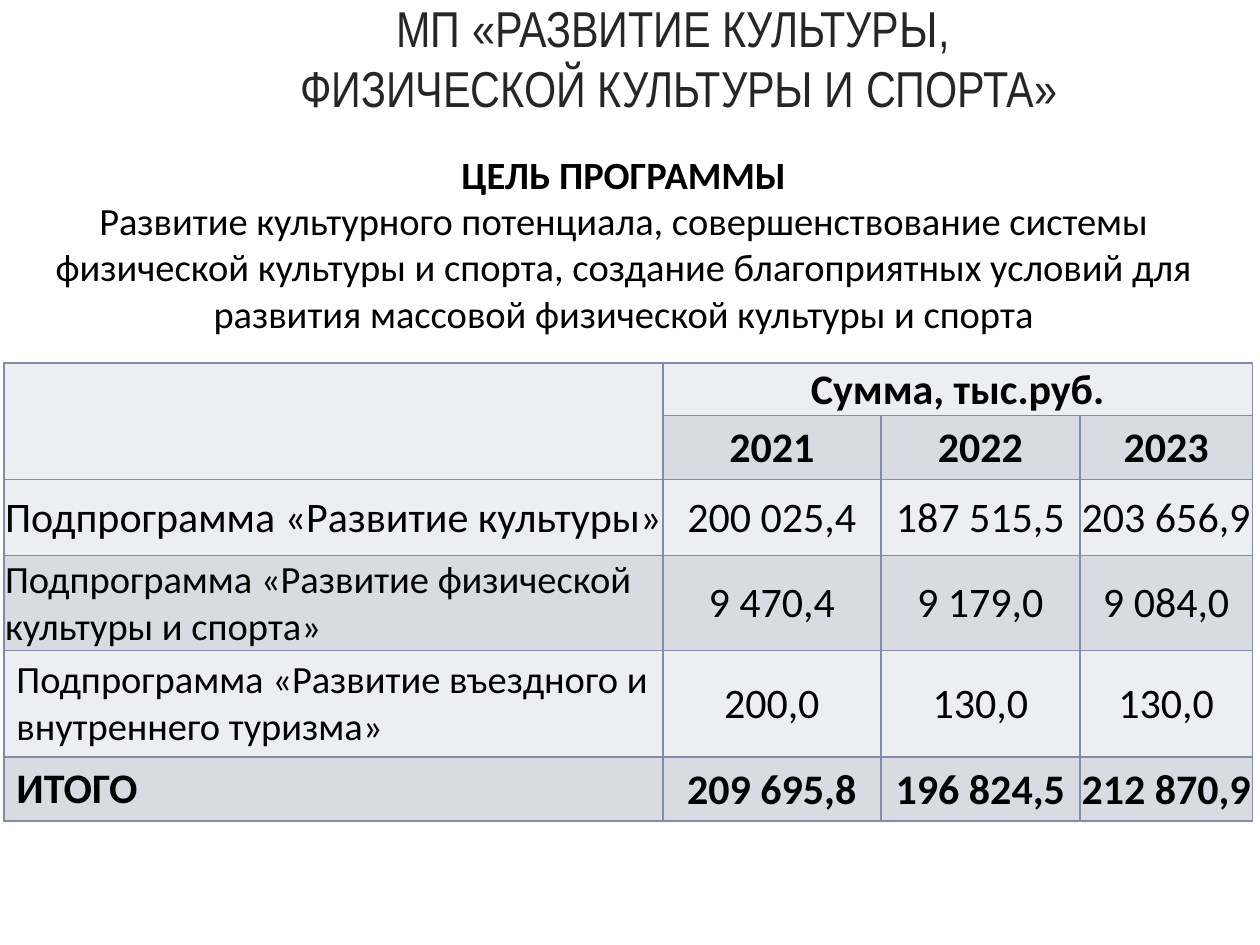
from lxml import etree
from pptx import Presentation
from pptx.dml.color import RGBColor
from pptx.enum.text import MSO_ANCHOR, MSO_AUTO_SIZE, PP_ALIGN
from pptx.oxml.ns import qn
from pptx.util import Pt

CENTER, LEFT = PP_ALIGN.CENTER, PP_ALIGN.LEFT
MIDDLE, TOP, BOTTOM = MSO_ANCHOR.MIDDLE, MSO_ANCHOR.TOP, MSO_ANCHOR.BOTTOM
NO_FIT = MSO_AUTO_SIZE.NONE

TITLE = "МП «РАЗВИТИЕ КУЛЬТУРЫ, \vФИЗИЧЕСКОЙ КУЛЬТУРЫ И СПОРТА»"
GOAL_HEADING = "ЦЕЛЬ ПРОГРАММЫ"
GOAL = ("Развитие культурного потенциала, совершенствование системы физической "
        "культуры и спорта, создание благоприятных условий для развития массовой "
        "физической культуры и спорта")
BUDGET = [
    ["", "Сумма, тыс.руб.", "", ""],
    ["", "2021", "2022", "2023"],
    ["Подпрограмма «Развитие культуры»", "200 025,4", "187 515,5", "203 656,9"],
    ["Подпрограмма «Развитие физической культуры и спорта»",
     "9 470,4", "9 179,0", "9 084,0"],
    ["Подпрограмма «Развитие въездного и внутреннего туризма»",
     "200,0", "130,0", "130,0"],
    ["ИТОГО", "209 695,8", "196 824,5", "212 870,9"],
]
COLUMN_WIDTHS = [376.56, 124.56, 113.76, 98.64]
ROW_HEIGHTS = [29.7, 36.6, 43.4, 54.4, 60.9, 36.5]
BAND_FILLS = ["EDEEF1", "D8DBE2"]
BOLD_ROWS = {0, 1, 5}
SMALL_LABEL_ROWS = {3, 4}
PADDED_LABEL_ROWS = {4, 5}


def color(value):
    """Return the colour for a hex string."""
    return RGBColor.from_string(value)


def style(para, size, bold=False, align=CENTER, name="Calibri", ink="000000"):
    """Set the alignment and font of a paragraph."""
    para.alignment = align
    para.font.name = name
    para.font.size = Pt(size)
    para.font.bold = bold
    para.font.color.rgb = color(ink)


def add_title(page, left, top, width, height):
    """Place the programme name in the title placeholder."""
    title = page.shapes.title
    title.left, title.top = Pt(left), Pt(top)
    title.width, title.height = Pt(width), Pt(height)
    frame = title.text_frame
    frame.text = TITLE
    frame.auto_size = NO_FIT
    frame.vertical_anchor = BOTTOM
    style(frame.paragraphs[0], 28.8, name="Arial Narrow", ink="262626")


def add_goal(page, left, top, width, height):
    """Place the goal heading with its statement."""
    box = page.shapes.add_textbox(Pt(left), Pt(top), Pt(width), Pt(height))
    frame = box.text_frame
    frame.word_wrap = True
    frame.text = f"{GOAL_HEADING}\n{GOAL}"
    for para, bold in zip(frame.paragraphs, (True, False)):
        style(para, 22, bold)


def outline(cell, ink, width):
    """Draw a line on all four sides of a cell."""
    properties = cell._tc.get_or_add_tcPr()
    for position, side in enumerate(("a:lnL", "a:lnR", "a:lnT", "a:lnB")):
        line = etree.Element(qn(side), w=str(Pt(width)))
        fill = etree.SubElement(line, qn("a:solidFill"))
        etree.SubElement(fill, qn("a:srgbClr"), val=ink)
        properties.insert(position, line)


def format_cell(cell, row, column, text):
    """Fill one budget cell and format it by its row and column."""
    label = column == 0
    cell.text = text
    cell.fill.solid()
    cell.fill.fore_color.rgb = color(BAND_FILLS[row % 2])
    outline(cell, "808DA9", 1)
    if label and row in PADDED_LABEL_ROWS:
        cell.vertical_anchor = TOP
    else:
        cell.vertical_anchor = MIDDLE
        cell.margin_left = cell.margin_right = cell.margin_top = Pt(0.72)
        cell.margin_bottom = Pt(0)
    size = 22 if label and row in SMALL_LABEL_ROWS else 24
    style(cell.text_frame.paragraphs[0], size, row in BOLD_ROWS,
          LEFT if label else CENTER)


def add_budget(page, left, top):
    """Place the table of subprogramme amounts by year."""
    frame = page.shapes.add_table(
        len(BUDGET), len(COLUMN_WIDTHS), Pt(left), Pt(top),
        Pt(sum(COLUMN_WIDTHS)), Pt(sum(ROW_HEIGHTS)))
    table = frame.table
    for column, width in zip(table.columns, COLUMN_WIDTHS):
        column.width = Pt(width)
    for row, height in zip(table.rows, ROW_HEIGHTS):
        row.height = Pt(height)
    for row, texts in enumerate(BUDGET):
        for column, text in enumerate(texts):
            format_cell(table.cell(row, column), row, column, text)
    table.cell(0, 0).merge(table.cell(1, 0))
    table.cell(0, 1).merge(table.cell(0, 3))


def main():
    """Build the slide and save the deck."""
    deck = Presentation()
    deck.slide_width, deck.slide_height = Pt(720), Pt(540)
    page = deck.slides.add_slide(deck.slide_layouts[5])
    add_title(page, 48, 0, 680, 71)
    add_budget(page, 2.2, 207.4)
    add_goal(page, -3.6, 82.8, 720, 114)
    deck.save("out.pptx")


if __name__ == "__main__":
    main()
